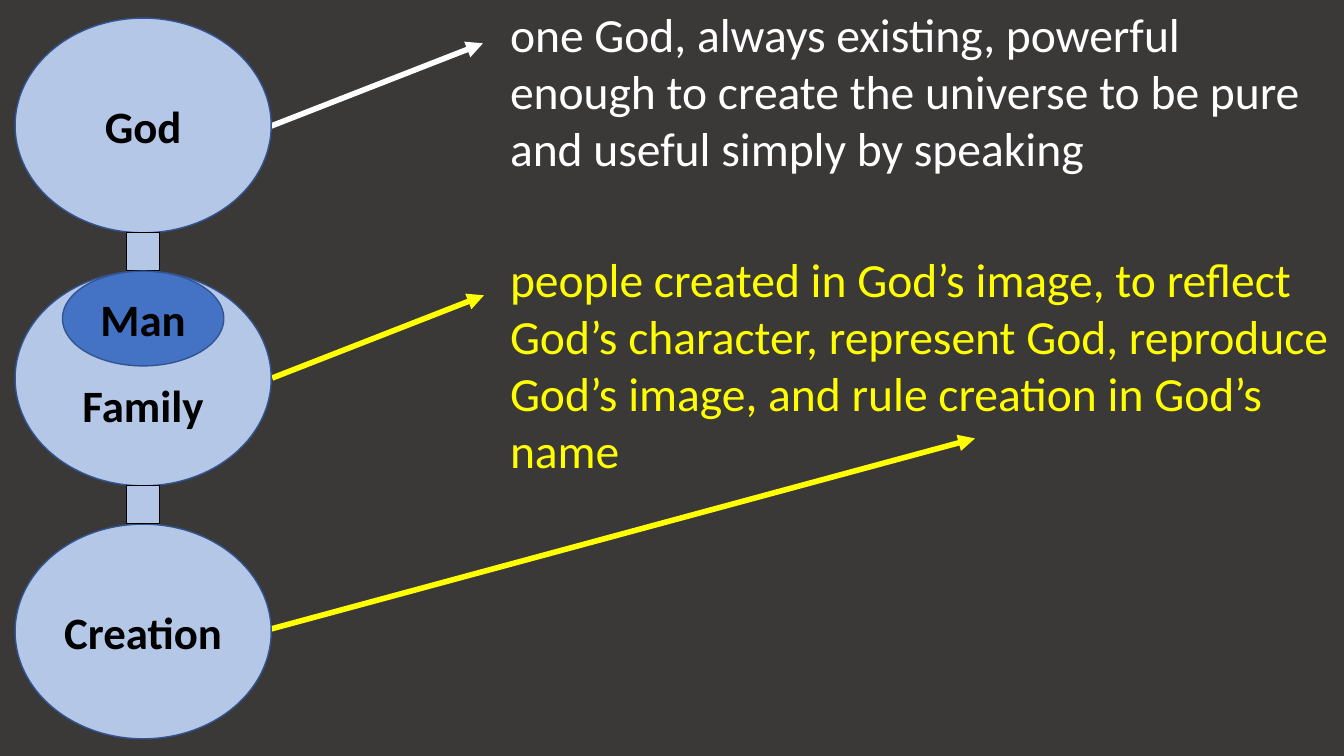
from lxml.etree import SubElement
from pptx import Presentation
from pptx.dml.color import RGBColor
from pptx.enum.shapes import MSO_CONNECTOR as Connector, MSO_SHAPE as Shape
from pptx.enum.text import MSO_ANCHOR as Anchor, MSO_AUTO_SIZE as AutoSize, PP_ALIGN as Align
from pptx.oxml.ns import qn
from pptx.util import Inches, Pt

CHARCOAL = RGBColor(0x3B, 0x38, 0x38)
PALE_BLUE = RGBColor(0xB4, 0xC7, 0xE7)
BLUE = RGBColor(0x44, 0x72, 0xC4)
OUTLINE_BLUE = RGBColor(0x32, 0x54, 0x91)
BLACK = RGBColor(0, 0, 0)
WHITE = RGBColor(0xFF, 0xFF, 0xFF)
YELLOW = RGBColor(0xFF, 0xFF, 0)

CIRCLE_LEFT, CIRCLE_TOP = 0.15, 0.18
CIRCLE_WIDTH, CIRCLE_HEIGHT = 2.54, 2.13
LINK_WIDTH, LINK_HEIGHT = 0.33, 0.37
PITCH = CIRCLE_HEIGHT + LINK_HEIGHT + 0.01
CENTRE_X = CIRCLE_LEFT + CIRCLE_WIDTH / 2


def apply_format(target, values):
    """Set every named attribute on the target."""
    for name, value in values.items():
        setattr(target, name, value)


def write_text(frame, wording, color, size, bold=False):
    """Write one formatted run and return its paragraph."""
    paragraph = frame.paragraphs[0]
    run = paragraph.add_run()
    run.text = wording
    apply_format(run.font, {"name": "Calibri", "size": Pt(size), "bold": bold})
    run.font.color.rgb = color
    return paragraph


def add_description(slide, top, height, wording, color):
    """Add a wrapped description on the right side."""
    box = slide.shapes.add_textbox(Inches(4.96), Inches(top), Inches(8.38), Inches(height))
    apply_format(box.text_frame, {"word_wrap": True, "auto_size": AutoSize.SHAPE_TO_FIT_TEXT})
    write_text(box.text_frame, wording, color, 34)


def add_arrow(slide, start, end, color):
    """Add a straight arrow with a triangular head."""
    points = [Inches(value) for value in (*start, *end)]
    arrow = slide.shapes.add_connector(Connector.STRAIGHT, *points)
    arrow.line.color.rgb = color
    arrow.line.width = Pt(4)
    SubElement(arrow.line._get_or_add_ln(), qn("a:tailEnd"), type="triangle")
    SubElement(arrow._element.spPr, qn("a:effectLst"))


def add_centred(slide, kind, top, width, height, fill, outline, weight):
    """Add a filled shape centred on the chain's axis."""
    part = slide.shapes.add_shape(
        kind, Inches(CENTRE_X - width / 2), Inches(top), Inches(width), Inches(height))
    part.shadow.inherit = False
    part.fill.solid()
    part.fill.fore_color.rgb = fill
    part.line.color.rgb = outline
    part.line.width = Pt(weight)
    return part


def add_oval(slide, top, width, height, fill, label, text_inset=0.05):
    """Add an oval with a bold centred label."""
    oval = add_centred(slide, Shape.OVAL, top, width, height, fill, OUTLINE_BLUE, 1)
    apply_format(oval.text_frame, {
        "word_wrap": True,
        "vertical_anchor": Anchor.MIDDLE,
        "margin_top": Inches(text_inset),
    })
    write_text(oval.text_frame, label, BLACK, 32, True).alignment = Align.CENTER


def main():
    """Build the slide and save it."""
    deck = Presentation()
    apply_format(deck, {"slide_width": Inches(13.33), "slide_height": Inches(7.5)})
    slide = deck.slides.add_slide(deck.slide_layouts[6])
    slide.background.fill.solid()
    slide.background.fill.fore_color.rgb = CHARCOAL

    add_description(
        slide, 0, 1.82,
        "one God, always existing, powerful enough to create the universe "
        "to be pure and useful simply by speaking", WHITE)
    add_description(
        slide, 2.43, 2.39,
        "people created in God’s image, to reflect God’s character, represent God, "
        "reproduce God’s image, and rule creation in God’s name", YELLOW)

    add_arrow(slide, (2.7, 3.75), (4.8, 2.93), YELLOW)
    add_arrow(slide, (2.65, 6.25), (9.67, 4.35), YELLOW)
    add_arrow(slide, (2.69, 1.25), (4.79, 0.43), WHITE)

    for index, (label, inset) in enumerate([("God", 0.05), ("Family", 0.56), ("Creation", 0.05)]):
        add_oval(slide, CIRCLE_TOP + index * PITCH, CIRCLE_WIDTH, CIRCLE_HEIGHT,
                 PALE_BLUE, label, inset)
    for index in range(2):
        add_centred(slide, Shape.RECTANGLE, CIRCLE_TOP + CIRCLE_HEIGHT + index * PITCH,
                    LINK_WIDTH, LINK_HEIGHT, PALE_BLUE, BLACK, 0.75)
    add_oval(slide, CIRCLE_TOP + PITCH, 1.6, 0.94, BLUE, "Man")

    deck.save("out.pptx")


if __name__ == "__main__":
    main()
